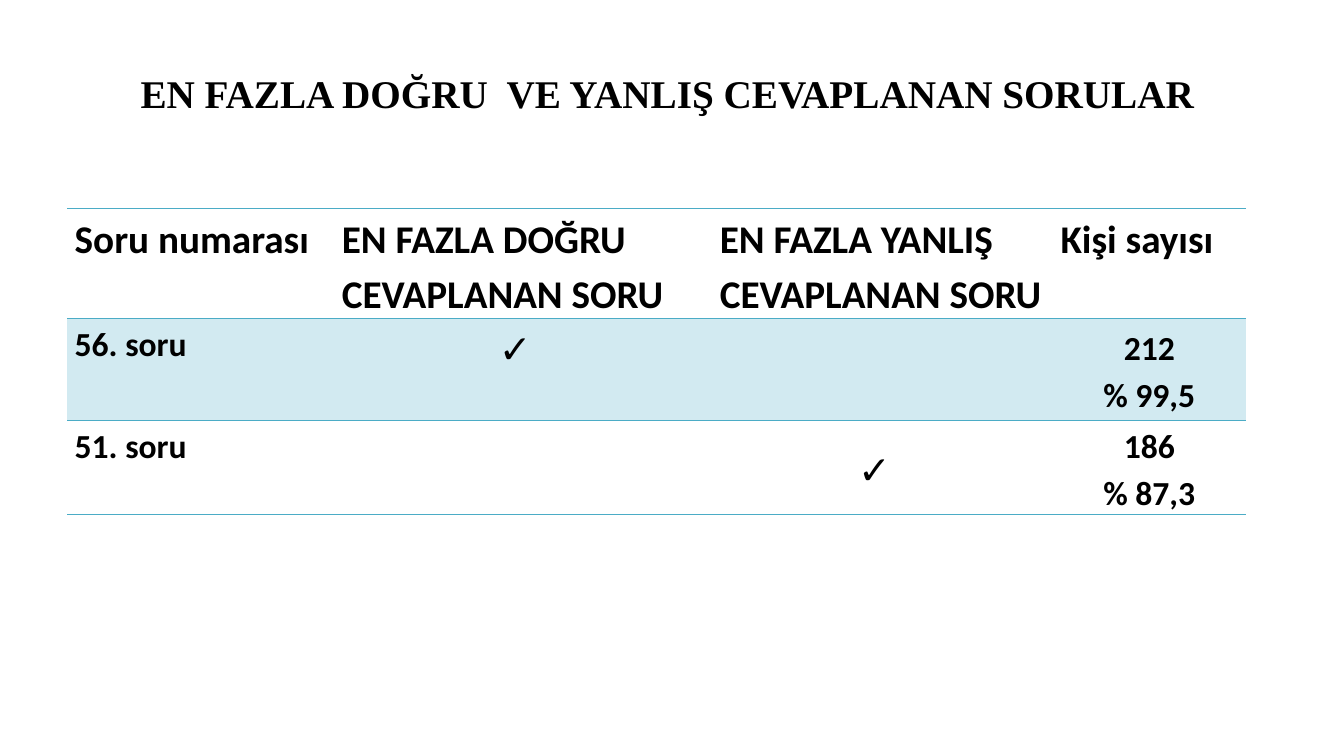
from dataclasses import dataclass

from lxml import etree
from pptx import Presentation
from pptx.dml.color import RGBColor
from pptx.enum.text import MSO_ANCHOR, PP_ALIGN
from pptx.oxml.ns import qn
from pptx.util import Pt

LEFT, CENTER = PP_ALIGN.LEFT, PP_ALIGN.CENTER
TOP, MIDDLE = MSO_ANCHOR.TOP, MSO_ANCHOR.MIDDLE
NO_GRID = "{2D5ABB26-0587-4C30-8999-92F81FD0307C}"


@dataclass(frozen=True)
class Theme:
    """Colours, fonts and type sizes of the slide."""
    ink: str = "000000"
    rule: str = "4BACC6"
    band: str = "D2EAF1"
    serif: str = "Times New Roman"
    sans: str = "Calibri"
    large: int = 28
    small: int = 24


THEME = Theme()
MARK = "✓"
HEADS = ["Soru numarası", "EN FAZLA DOĞRU CEVAPLANAN SORU",
         "EN FAZLA YANLIŞ CEVAPLANAN SORU", "Kişi sayısı"]
ROWS = [HEADS,
        ["56. soru", MARK, "", "212\n% 99,5"],
        ["51. soru", "", MARK, "186\n% 87,3"]]
WIDTHS = [190.8, 270, 243.4, 137.5]
HEIGHTS = [78.8, 72.7, 67.3]


def write(frame, text, size=THEME.large, font=THEME.sans, bold=True,
          align=LEFT, space=1.15):
    """Fill a text frame, one paragraph for each line of text."""
    for num, line in enumerate(text.split("\n")):
        par = frame.add_paragraph() if num else frame.paragraphs[0]
        par.alignment, par.line_spacing = align, space
        run = par.add_run()
        run.text = line
        run.font.size, run.font.name, run.font.bold = Pt(size), font, bold
        run.font.color.rgb = RGBColor.from_string(THEME.ink)


def add_title(slide, text):
    """Add the centred title."""
    box = slide.shapes.add_textbox(Pt(48), Pt(21.6), Pt(864), Pt(90))
    frame = box.text_frame
    frame.word_wrap = True
    frame.vertical_anchor = MIDDLE
    write(frame, text, font=THEME.serif, align=CENTER, space=1)


def add_rule(cell, side):
    """Draw a thin rule on one side of a cell."""
    line = etree.SubElement(cell._tc.get_or_add_tcPr(), qn(f"a:{side}"), w=str(Pt(1)))
    fill = etree.SubElement(line, qn("a:solidFill"))
    etree.SubElement(fill, qn("a:srgbClr"), val=THEME.rule)


def fill_cell(cell, text, row, col):
    """Format one cell by its row and column."""
    last = col == len(WIDTHS) - 1
    cell.margin_left = cell.margin_right = Pt(5.4)
    cell.margin_top = cell.margin_bottom = 0
    cell.vertical_anchor = MIDDLE if row and last else TOP
    if row < 2:
        add_rule(cell, "lnT")
    if row != 1:
        add_rule(cell, "lnB")
    if row == 1:
        cell.fill.solid()
        cell.fill.fore_color.rgb = RGBColor.from_string(THEME.band)
    else:
        cell.fill.background()
    if text == MARK:
        cell.margin_right = Pt(17)
        cell.vertical_anchor = TOP if row == 1 else MIDDLE
        write(cell.text_frame, text, bold=False, align=CENTER)
    elif text:
        write(cell.text_frame, text, size=THEME.small if row else THEME.large,
              align=CENTER if row and last else LEFT)


def add_grid(slide):
    """Add the table of questions."""
    frame = slide.shapes.add_table(len(ROWS), len(WIDTHS), Pt(48), Pt(149),
                                   Pt(sum(WIDTHS)), Pt(sum(HEIGHTS)))
    table = frame.table
    table.first_row = table.horz_banding = False
    table._tbl.tblPr.find(qn("a:tableStyleId")).text = NO_GRID
    for col, width in zip(table.columns, WIDTHS):
        col.width = Pt(width)
    for row, height in zip(table.rows, HEIGHTS):
        row.height = Pt(height)
    for row, texts in enumerate(ROWS):
        for col, text in enumerate(texts):
            fill_cell(table.cell(row, col), text, row, col)


def main():
    """Build and save the slide."""
    deck = Presentation()
    deck.slide_width, deck.slide_height = Pt(960), Pt(540)
    slide = deck.slides.add_slide(deck.slide_layouts[6])
    add_title(slide, "EN FAZLA DOĞRU  VE YANLIŞ CEVAPLANAN SORULAR ")
    add_grid(slide)
    deck.save("out.pptx")


if __name__ == "__main__":
    main()
